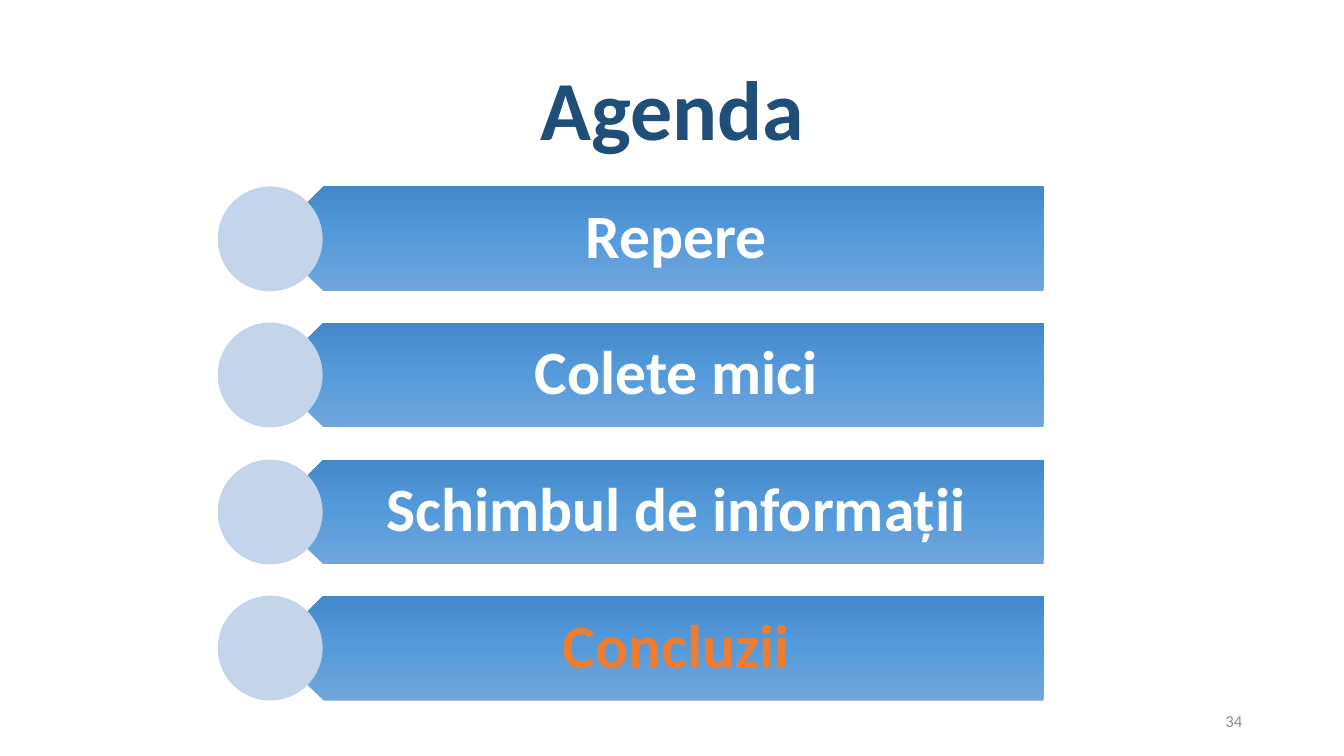
from copy import deepcopy

from pptx import Presentation
from pptx import util as u
from pptx.dml.color import RGBColor
from pptx.enum import shapes, text

PX = 9144  # EMU per px, 100 px to the inch

NAVY = RGBColor(0x1F, 0x4E, 0x79)
GREY = RGBColor(0x8C, 0x8C, 0x8C)
WHITE = RGBColor(0xFF, 0xFF, 0xFF)
ORANGE = RGBColor(0xED, 0x7D, 0x31)
PALE_BLUE = RGBColor(0xC4, 0xD5, 0xEB)
BAR_STOPS = [
    (0, RGBColor(0x71, 0xA6, 0xDB)),
    (0.5, RGBColor(0x55, 0x9B, 0xDB)),
    (1, RGBColor(0x44, 0x8A, 0xCA)),
]

FONT = "Calibri"
ITEMS = [
    ("Repere", WHITE),
    ("Colete mici", WHITE),
    ("Schimbul de informații", WHITE),
    ("Concluzii", ORANGE),
]
FIRST_TOP, LAST_TOP, BAR_HEIGHT = 185, 591, 104


def px(*lengths):
    return [u.Emu(length * PX) for length in lengths]


def set_text(shape, words, size, color, align, bold=False, spacing=1.0):
    frame = shape.text_frame
    frame.word_wrap = True
    frame.auto_size = text.MSO_AUTO_SIZE.NONE
    frame.vertical_anchor = text.MSO_ANCHOR.MIDDLE
    frame.text = words
    paragraph = frame.paragraphs[0]
    paragraph.alignment = align
    paragraph.line_spacing = spacing
    font = paragraph.runs[0].font
    font.name, font.size, font.bold = FONT, u.Pt(size), bold
    font.color.rgb = color


def add_plain_shape(group, kind, *box):
    shape = group.shapes.add_shape(kind, *px(*box))
    shape.shadow.inherit = False
    shape.line.fill.background()
    return shape


def fill_gradient(shape):
    fill = shape.fill
    fill.gradient()
    fill.gradient_angle = 270
    # The default gradient has two stops; a third goes between them
    first_stop = shape.element.xpath(".//a:gs")[0]
    first_stop.addnext(deepcopy(first_stop))
    for stop, (position, color) in zip(fill.gradient_stops, BAR_STOPS):
        stop.position = position
        stop.color.rgb = color


def add_agenda_item(slide, top, words, color):
    group = slide.shapes.add_group_shape()

    # Bar pointing left
    bar = add_plain_shape(group, shapes.MSO_SHAPE.PENTAGON, 269, top, 766, BAR_HEIGHT)
    bar.rotation = 180
    fill_gradient(bar)

    # Label
    label = group.shapes.add_textbox(*px(295, top, 740, BAR_HEIGHT))
    frame = label.text_frame
    (frame.margin_left, frame.margin_top,
     frame.margin_right, frame.margin_bottom) = px(46, 18, 34, 18)
    set_text(label, words, 44, color, text.PP_ALIGN.CENTER, bold=True, spacing=0.9)

    # Circle over the tip
    circle = add_plain_shape(group, shapes.MSO_SHAPE.OVAL, 216, top, BAR_HEIGHT, BAR_HEIGHT)
    circle.fill.solid()
    circle.fill.fore_color.rgb = PALE_BLUE


def add_title(slide, words):
    title = slide.shapes.title
    title.left, title.top, title.width, title.height = px(92, 40, 1150, 145)
    set_text(title, words, 60, NAVY, text.PP_ALIGN.CENTER, bold=True, spacing=0.9)


def add_page_number(slide, number):
    box = slide.shapes.add_textbox(*px(942, 695, 300, 40))
    set_text(box, number, 12, GREY, text.PP_ALIGN.RIGHT)


def main():
    presentation = Presentation()
    presentation.slide_width, presentation.slide_height = px(1333, 750)
    slide = presentation.slides.add_slide(presentation.slide_layouts[5])

    add_title(slide, "Agenda")
    add_page_number(slide, "34")

    # Agenda items at an equal pitch
    for index, (words, color) in enumerate(ITEMS):
        top = FIRST_TOP + round(index * (LAST_TOP - FIRST_TOP) / (len(ITEMS) - 1))
        add_agenda_item(slide, top, words, color)

    presentation.save("out.pptx")


if __name__ == "__main__":
    main()
